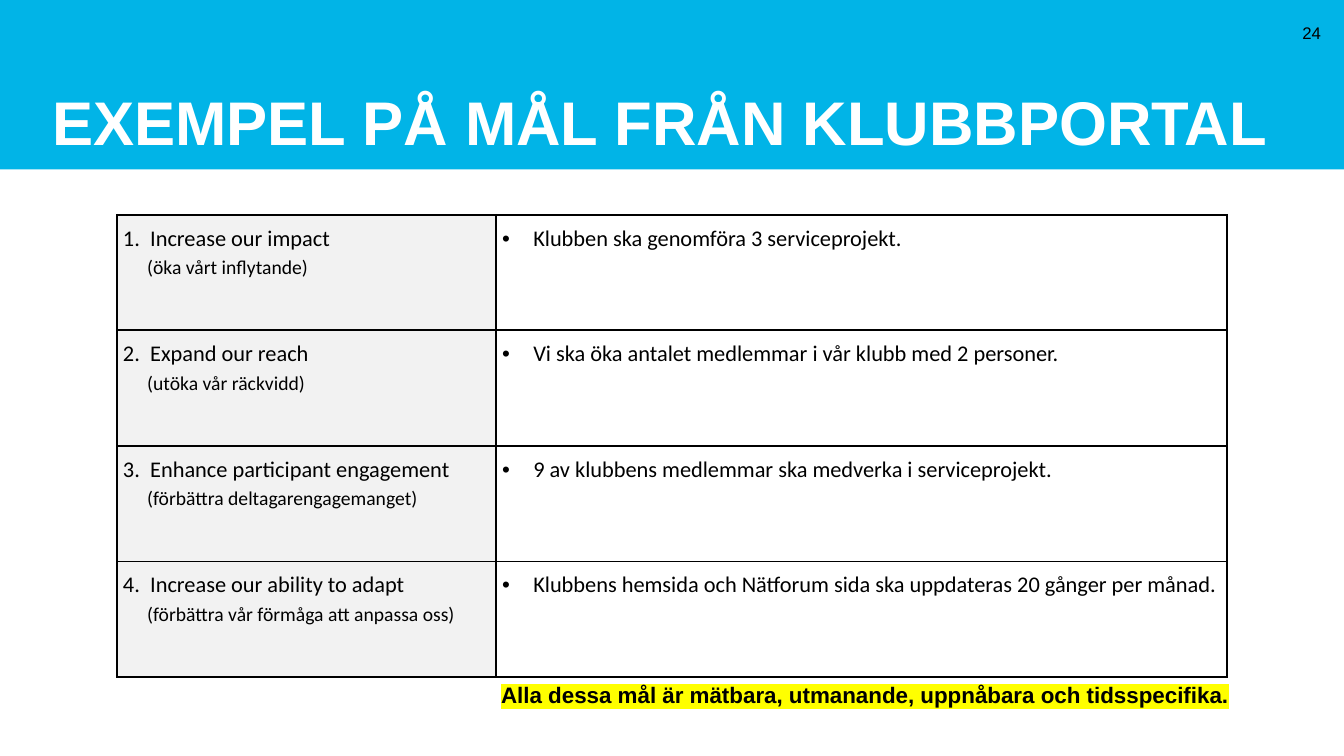
from dataclasses import dataclass

from lxml import etree
from pptx import Presentation
from pptx import util as u
from pptx.dml.color import RGBColor
from pptx.enum import shapes, text
from pptx.oxml.ns import qn

COLORS = {
    "band": "01B4E7",
    "white": "FFFFFF",
    "black": "000000",
    "goal": "F2F2F2",
    "highlight": "FFFF00",
}
ROW_HEIGHT = 1.147


@dataclass(frozen=True)
class Goal:
    english: str
    swedish: str
    target: str


GOALS = [
    Goal("Increase our impact", "(öka vårt inflytande)",
         "Klubben ska genomföra 3 serviceprojekt."),
    Goal("Expand our reach", "(utöka vår räckvidd)",
         "Vi ska öka antalet medlemmar i vår klubb med 2 personer."),
    Goal("Enhance participant engagement", "(förbättra deltagarengagemanget)",
         "9 av klubbens medlemmar ska medverka i serviceprojekt."),
    Goal("Increase our ability to adapt", "(förbättra vår förmåga att anpassa oss)",
         "Klubbens hemsida och Nätforum sida ska uppdateras 20 gånger per månad."),
]


def rgb(name: str) -> RGBColor:
    return RGBColor.from_string(COLORS[name])


def style(paragraph, size: float, font: str, color: str = "black", bold: bool = False) -> None:
    for run in paragraph.runs:
        run.font.size = u.Pt(size)
        run.font.name = font
        run.font.bold = bold
        run.font.color.rgb = rgb(color)


def indent(paragraph, margin: float, first: float = 0, bullet: str = "") -> None:
    props = paragraph._p.get_or_add_pPr()
    props.set("marL", str(u.Inches(margin)))
    props.set("indent", str(u.Inches(first)))
    if bullet:
        etree.SubElement(props, qn("a:buFont"), typeface="Arial")
        etree.SubElement(props, qn("a:buChar"), char=bullet)


def add_borders(cell) -> None:
    props = cell._tc.get_or_add_tcPr()
    for side in ("lnL", "lnR", "lnT", "lnB"):
        line = etree.SubElement(props, qn(f"a:{side}"), w=str(u.Pt(1.5)))
        fill = etree.SubElement(line, qn("a:solidFill"))
        etree.SubElement(fill, qn("a:srgbClr"), val=COLORS["black"])


def prepare_cell(cell) -> None:
    cell.margin_left = cell.margin_right = u.Inches(0.06)
    cell.margin_top = cell.margin_bottom = u.Inches(0.06)
    add_borders(cell)


def fill_goal(cell, number: int, goal: Goal) -> None:
    prepare_cell(cell)
    cell.fill.solid()
    cell.fill.fore_color.rgb = rgb("goal")
    cell.text_frame.text = f"{number}.\t{goal.english}\n{goal.swedish}"
    english, swedish = cell.text_frame.paragraphs
    english.line_spacing = swedish.line_spacing = 1.15
    indent(english, 0.27, -0.27)
    indent(swedish, 0.24)
    style(english, 16, "Calibri")
    style(swedish, 14, "Calibri")


def fill_target(cell, goal: Goal) -> None:
    prepare_cell(cell)
    cell.fill.background()
    cell.text_frame.text = goal.target
    target = cell.text_frame.paragraphs[0]
    target.line_spacing = 1.15
    indent(target, 0.31, -0.31, "•")
    style(target, 16, "Calibri")


def add_band(slide) -> None:
    band = slide.shapes.add_shape(
        shapes.MSO_SHAPE.RECTANGLE, 0, 0, u.Inches(13.33), u.Inches(1.68))
    band.shadow.inherit = False
    band.fill.solid()
    band.fill.fore_color.rgb = rgb("band")
    band.line.fill.background()
    slide.shapes.title._element.addprevious(band._element)


def add_title(slide, wording: str) -> None:
    title = slide.shapes.title
    title.left, title.top = u.Inches(0.42), u.Inches(0)
    title.width, title.height = u.Inches(12.58), u.Inches(1.68)
    frame = title.text_frame
    frame.text = wording
    frame.vertical_anchor = text.MSO_ANCHOR.BOTTOM
    frame.margin_left = frame.margin_right = frame.margin_bottom = u.Inches(0.1)
    frame.margin_top = 0
    heading = frame.paragraphs[0]
    heading.alignment = text.PP_ALIGN.LEFT
    heading.line_spacing = 0.9
    style(heading, 44, "Arial", "white", True)


def add_goal_table(slide) -> None:
    frame = slide.shapes.add_table(
        len(GOALS), 2, u.Inches(1.16), u.Inches(2.13),
        u.Inches(11.01), u.Inches(ROW_HEIGHT * len(GOALS)))
    table = frame.table
    table.first_row = table.horz_banding = False
    for column, width in zip(table.columns, (3.76, 7.25)):
        column.width = u.Inches(width)
    for index, goal in enumerate(GOALS):
        fill_goal(table.cell(index, 0), index + 1, goal)
        fill_target(table.cell(index, 1), goal)


def add_label(slide, wording: str, left: float, top: float, width: float, height: float,
              size: float, align: text.PP_ALIGN, bold: bool = False):
    label = slide.shapes.add_textbox(*map(u.Inches, (left, top, width, height)))
    frame = label.text_frame
    frame.word_wrap = True
    frame.vertical_anchor = text.MSO_ANCHOR.MIDDLE
    frame.text = wording
    paragraph = frame.paragraphs[0]
    paragraph.alignment = align
    style(paragraph, size, "Arial", bold=bold)
    return paragraph


def highlight(paragraph) -> None:
    for run in paragraph.runs:
        fill = run._r.rPr.find(qn("a:solidFill"))
        marker = etree.Element(qn("a:highlight"))
        etree.SubElement(marker, qn("a:srgbClr"), val=COLORS["highlight"])
        fill.addnext(marker)


def main() -> None:
    deck = Presentation()
    deck.slide_width, deck.slide_height = u.Inches(13.33), u.Inches(7.5)
    slide = deck.slides.add_slide(deck.slide_layouts[5])
    add_band(slide)
    add_title(slide, "EXEMPEL PÅ MÅL FRÅN KLUBBPORTAL")
    add_goal_table(slide)
    add_label(slide, "24", 12.74, 0.13, 0.46, 0.4, 12, text.PP_ALIGN.RIGHT)
    summary = add_label(
        slide, "Alla dessa mål är mätbara, utmanande, uppnåbara och tidsspecifika.",
        4.83, 6.71, 7.5, 0.37, 16, text.PP_ALIGN.CENTER, True)
    highlight(summary)
    deck.save("out.pptx")


if __name__ == "__main__":
    main()
